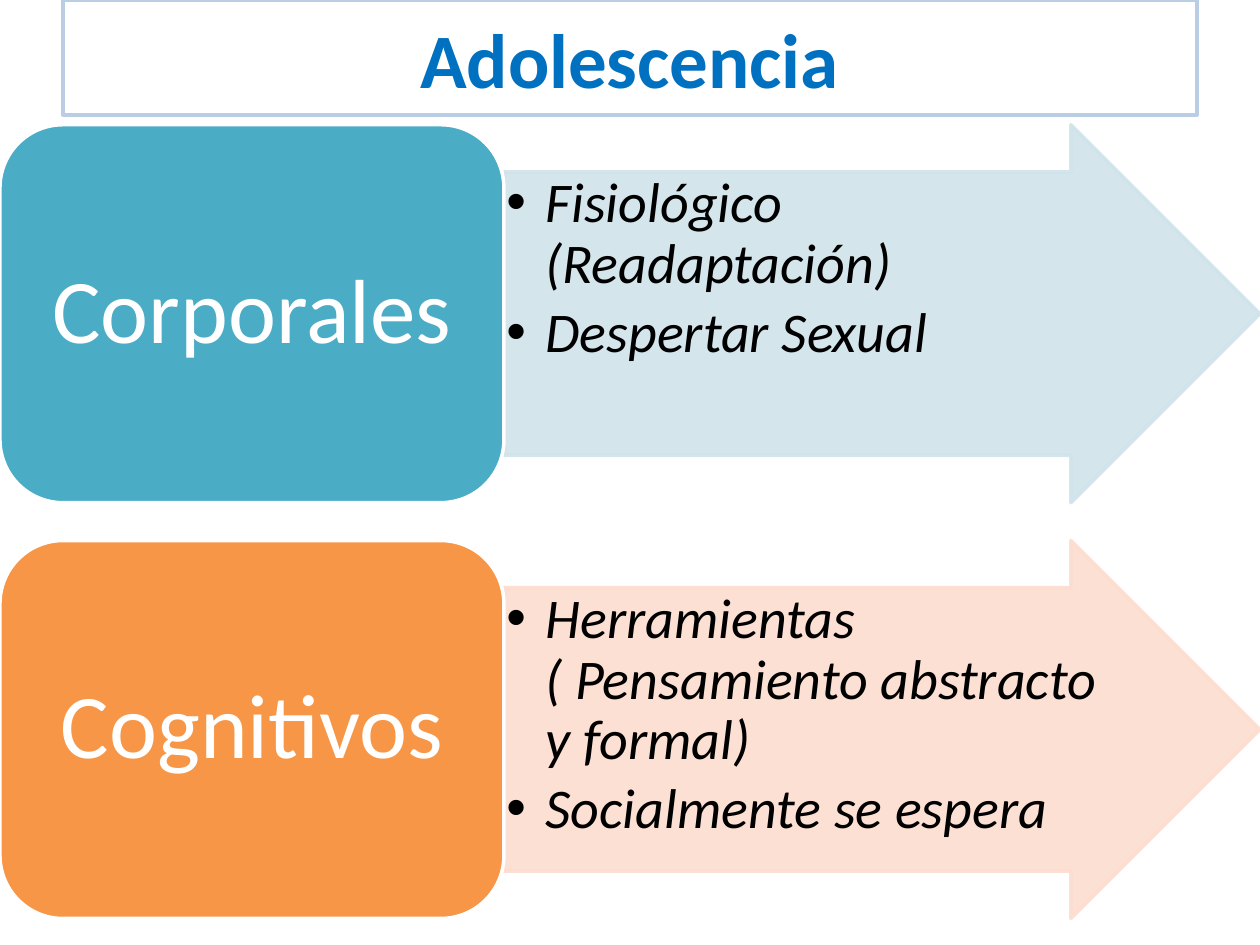
from lxml import etree
from pptx import Presentation
from pptx import util as u
from pptx.dml.color import RGBColor
from pptx.enum import shapes, text
from pptx.oxml.ns import qn

TITLE = "Adolescencia"
ROWS = [
    ("Corporales", "4BACC6", "D0E3EA",
     ["Fisiológico (Readaptación)", "Despertar Sexual"]),
    ("Cognitivos", "F79646", "FCDDCF",
     ["Herramientas ( Pensamiento abstracto y formal)", "Socialmente se espera"]),
]
TOP, STEP, HIGH = 0.99, 3.3, 3
SPLIT, WIDE = 4, 10
KIND = shapes.MSO_SHAPE


def color(code):
    return RGBColor.from_string(code)


def add_box(slide, kind, at, fill, line, weight):
    box = slide.shapes.add_shape(kind, *map(u.Inches, at))
    box.shadow.inherit = False
    if fill:
        box.fill.solid()
        box.fill.fore_color.rgb = color(fill)
    else:
        box.fill.background()
    box.line.color.rgb = color(line)
    box.line.width = u.Pt(weight)
    return box


def write(box, lines, size, ink, pads, align, anchor, bold=False, italic=False):
    frame = box.text_frame
    frame.text = "\n".join(lines)
    frame.word_wrap = True
    frame.vertical_anchor = anchor
    frame.margin_left = frame.margin_right = u.Inches(pads[0])
    frame.margin_top = frame.margin_bottom = u.Inches(pads[1])
    for para in frame.paragraphs:
        para.alignment = align
        for run in para.runs:
            font = run.font
            font.name, font.size = "Calibri", u.Pt(size)
            font.bold, font.italic = bold, italic
            font.color.rgb = color(ink)
    return frame.paragraphs


def add_bullet(para):
    props = para._p.get_or_add_pPr()
    props.set("marL", str(u.Inches(0.31)))
    props.set("indent", str(-u.Inches(0.31)))
    etree.SubElement(props, qn("a:buFont"), typeface="Arial")
    etree.SubElement(props, qn("a:buChar"), char="•")


def fade(box, share):
    """Set the opacity of fill and line, in percent."""
    for tone in box._element.spPr.iter(qn("a:srgbClr")):
        etree.SubElement(tone, qn("a:alpha"), val=str(share * 1000))


def add_row(slide, top, name, dark, pale, points):
    arrow = add_box(slide, KIND.RIGHT_ARROW, (SPLIT, top, WIDE - SPLIT, HIGH),
                    pale, pale, 2)
    arrow.adjustments[0], arrow.adjustments[1] = 0.75, 0.5
    fade(arrow, 90)
    for para in write(arrow, points, 32, "000000", (0.02, 0.02),
                      text.PP_ALIGN.LEFT, text.MSO_ANCHOR.TOP, italic=True):
        para.line_spacing = 0.9
        para.space_after = u.Pt(5)
        add_bullet(para)

    label = add_box(slide, KIND.ROUNDED_RECTANGLE, (0, top, SPLIT, HIGH),
                    dark, "FFFFFF", 2)
    for para in write(label, [name], 52, "FFFFFF", (0.22, 0.11),
                      text.PP_ALIGN.CENTER, text.MSO_ANCHOR.MIDDLE):
        para.line_spacing = 0.9


def main():
    deck = Presentation()
    deck.slide_width, deck.slide_height = u.Inches(WIDE), u.Inches(7.5)
    slide = deck.slides.add_slide(deck.slide_layouts[6])
    head = add_box(slide, KIND.RECTANGLE, (0.5, 0, 9, 0.91), None, "B9CDE5", 2.25)
    write(head, [TITLE], 44, "0070C0", (0.1, 0.05),
          text.PP_ALIGN.CENTER, text.MSO_ANCHOR.MIDDLE, bold=True)
    for i, row in enumerate(ROWS):
        add_row(slide, TOP + i * STEP, *row)
    deck.save("out.pptx")


if __name__ == "__main__":
    main()
